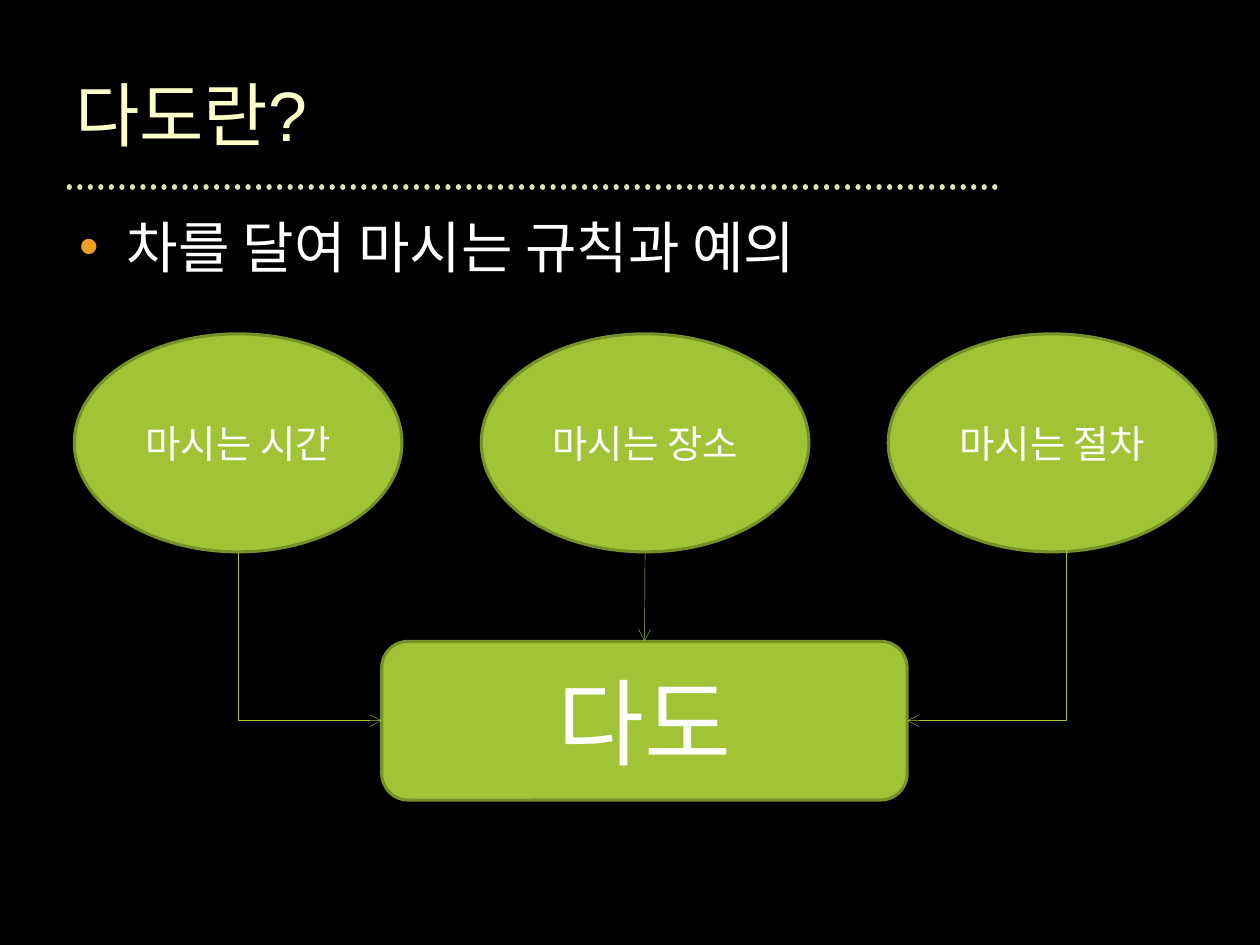
"""Build a slide that explains the tea ceremony with three ovals leading to one box."""
from lxml import etree
from pptx import Presentation
from pptx.dml.color import RGBColor
from pptx.enum.dml import MSO_LINE
from pptx.enum.shapes import MSO_CONNECTOR, MSO_SHAPE
from pptx.enum.text import MSO_ANCHOR, PP_ALIGN
from pptx.oxml.ns import qn
from pptx.util import Inches, Pt

OVAL, ROUNDED = MSO_SHAPE.OVAL, MSO_SHAPE.ROUNDED_RECTANGLE
STRAIGHT, ELBOW = MSO_CONNECTOR.STRAIGHT, MSO_CONNECTOR.ELBOW
MIDDLE, TOP, CENTER, LEFT = MSO_ANCHOR.MIDDLE, MSO_ANCHOR.TOP, PP_ALIGN.CENTER, PP_ALIGN.LEFT
GREEN, DARK_GREEN, WHITE = "A0C435", "769127", "FFFFFF"


def rgb(value):
    """Turn a hex string into a colour."""
    return RGBColor.from_string(value)


def write(sp, text, size, font, color, anchor, align):
    """Set and format the single paragraph of a shape."""
    tf = sp.text_frame
    tf.word_wrap = True
    tf.vertical_anchor = anchor
    p = tf.paragraphs[0]
    p.text = text
    p.alignment = align
    r = p.runs[0]
    r.font.size, r.font.name = Pt(size), font
    r.font.color.rgb = rgb(color)
    return p


prs = Presentation()
prs.slide_width, prs.slide_height = Inches(10), Inches(7.5)
COL, ROW = prs.slide_width / 100, prs.slide_height / 100
s = prs.slides.add_slide(prs.slide_layouts[6])
s.background.fill.solid()
s.background.fill.fore_color.rgb = rgb("000000")

rule = s.shapes.add_connector(STRAIGHT, *map(int, (5.5 * COL, 19.8 * ROW, 79.7 * COL, 19.8 * ROW)))
rule.line.color.rgb = rgb("DDE0AF")
rule.line.width = Pt(3)
rule.line.dash_style = MSO_LINE.ROUND_DOT
rule.line._get_or_add_ln().set("cap", "rnd")

title = s.shapes.add_textbox(*map(int, (5 * COL, 5.2 * ROW, 74.7 * COL, 13.6 * ROW)))
write(title, "다도란?", 40, "Arial", "FBFEC6", MIDDLE, LEFT)

body = s.shapes.add_textbox(*map(int, (5.3 * COL, 21.87 * ROW, 90 * COL, 67.47 * ROW)))
p = write(body, "차를 달여 마시는 규칙과 예의", 32, "Arial", WHITE, TOP, LEFT)
p.space_before = Pt(6.4)
pPr = p._p.get_or_add_pPr()
pPr.set("marL", str(Inches(0.38)))
pPr.set("indent", str(-Inches(0.38)))
etree.SubElement(etree.SubElement(pPr, qn("a:buClr")), qn("a:srgbClr")).set("val", "F29F26")
etree.SubElement(pPr, qn("a:buFont")).set("typeface", "Arial")
etree.SubElement(pPr, qn("a:buChar")).set("char", "•")

nodes = [(OVAL, 5.9 + 32.3 * i, 35.33, 26, 23.07, text, 22)
         for i, text in enumerate(("마시는 시간", "마시는 장소", "마시는 절차"))]
nodes.append((ROUNDED, 30.3, 67.87, 41.7, 16.8, "다도", 54))
for kind, x, y, w, h, text, size in nodes:
    sp = s.shapes.add_shape(kind, *map(int, (x * COL, y * ROW, w * COL, h * ROW)))
    sp.shadow.inherit = False
    sp.fill.solid()
    sp.fill.fore_color.rgb = rgb(GREEN)
    sp.line.color.rgb = rgb(DARK_GREEN)
    sp.line.width = Pt(1.75)
    write(sp, text, size, "Noto Sans", WHITE, MIDDLE, CENTER)
goal = sp

arrows = []
for x0, y0, x1, rotation in ((18.9, 58.4, 30.3, 270), (84.6, 57.33, 72, 90)):
    x0, x1, y0, y1 = x0 * COL, x1 * COL, y0 * ROW, 76.27 * ROW
    cx, cy, dx, dy = (x0 + x1) / 2, (y0 + y1) / 2, abs(x1 - x0) / 2, (y1 - y0) / 2
    side = dy if rotation == 270 else -dy
    c = s.shapes.add_connector(ELBOW, *map(int, (cx + side, cy - dx, cx - side, cy + dx)))
    c._element.spPr.find(qn("a:prstGeom")).set("prst", "bentConnector2")
    c._element.spPr.find(qn("a:xfrm")).set("rot", str(rotation * 60000))
    arrows.append(c)

c = s.shapes.add_connector(STRAIGHT, *map(int, (51.2 * COL, 58.4 * ROW, 51.2 * COL, 67.87 * ROW)))
c.end_connect(goal, 0)
arrows.append(c)

for c in arrows:
    c.line.color.rgb = rgb(GREEN)
    c.line.width = Pt(0.25)
    etree.SubElement(c.line._get_or_add_ln(), qn("a:tailEnd")).set("type", "arrow")
for c in [rule, *arrows]:
    etree.SubElement(c._element.spPr, qn("a:effectLst"))

prs.save("out.pptx")
